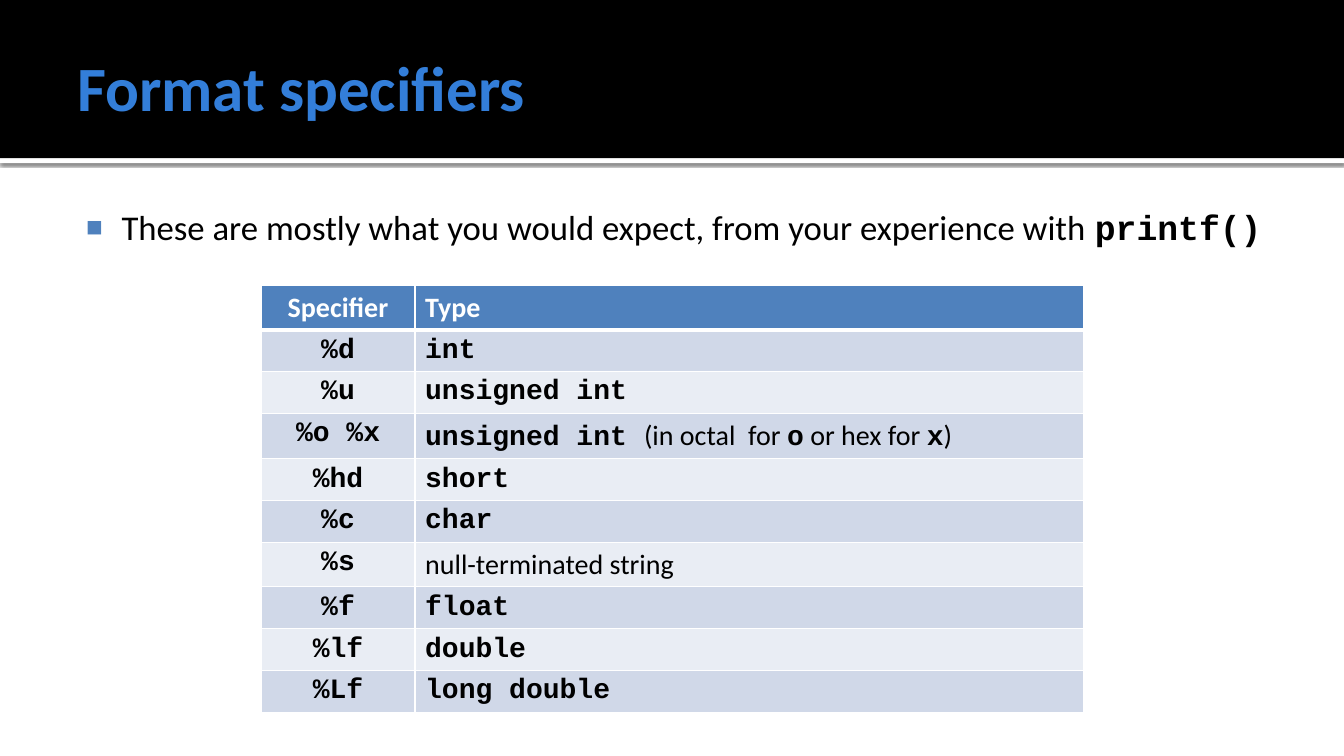
from lxml import etree
from pptx import Presentation
from pptx.dml.color import RGBColor
from pptx.enum.shapes import MSO_SHAPE
from pptx.enum.text import MSO_ANCHOR, MSO_AUTO_SIZE, PP_ALIGN
from pptx.oxml import parse_xml
from pptx.oxml.ns import nsdecls, qn
from pptx.util import Pt

RECT = MSO_SHAPE.RECTANGLE
MID, TOP = MSO_ANCHOR.MIDDLE, MSO_ANCHOR.TOP
LEFT, CENTER = PP_ALIGN.LEFT, PP_ALIGN.CENTER
FIXED = MSO_AUTO_SIZE.NONE

WIDE, HIGH = 960, 540
BLACK, WHITE, BLUE = "000000", "FFFFFF", "4F81BD"
STRIPES = "E9EDF4", "D0D8E8"
TEXT = {"name": "Calibri", "bold": False}
CODE = {"name": "Courier New", "bold": True}
HEAD = {"name": "Calibri", "bold": True}

ROWS = [
    ("%d", "`int`"),
    ("%u", "`unsigned int`"),
    ("%o %x", "`unsigned int `(in octal  for `o` or hex for `x`)"),
    ("%hd", "`short`"),
    ("%c", "`char`"),
    ("%s", "null-terminated string"),
    ("%f", "`float`"),
    ("%lf", "`double`"),
    ("%Lf", "`long double`"),
]


def paint(hue):
    """Return the colour for a hex string."""
    return RGBColor.from_string(hue)


def apply(item, vals):
    """Set each value in a dict as an attribute."""
    for key, val in vals.items():
        setattr(item, key, val)


def write(para, text, size, hue, plain=TEXT):
    """Write text as runs, with the parts between backticks set as code."""
    for pos, part in enumerate(text.split("`")):
        if part:
            run = para.add_run()
            run.text = part
            apply(run.font, {"size": Pt(size), **(CODE if pos % 2 else plain)})
            run.font.color.rgb = paint(hue)


def place(shape, box):
    """Move a shape to a box given in points."""
    apply(shape, dict(zip(("left", "top", "width", "height"), map(Pt, box))))


def frame(shape, pads, anchor):
    """Set the margins and anchor of a text frame and return its paragraph."""
    sides = "margin_left", "margin_top", "margin_right", "margin_bottom"
    apply(shape.text_frame, {
        "word_wrap": True, "auto_size": FIXED, "vertical_anchor": anchor,
        **dict(zip(sides, map(Pt, pads)))})
    return shape.text_frame.paragraphs[0]


def band(slide, box, hue):
    """Put a plain band behind all other shapes."""
    shape = slide.shapes.add_shape(RECT, *map(Pt, box))
    shape.shadow.inherit = False
    shape.fill.solid()
    shape.fill.fore_color.rgb = paint(hue)
    shape.line.fill.background()
    shape.element.getparent().insert(2, shape.element)
    return shape


def banner(slide, box):
    """Build the black banner, its shaded white edge and the title."""
    left, top, width, height = box
    band(slide, box, BLACK)
    edge = band(slide, (left, top + height, width, 3.6), WHITE)
    glow = edge.element.spPr.find(qn("a:effectLst"))
    glow.append(parse_xml(
        f'<a:outerShdw {nsdecls("a")} blurRad="{Pt(2.5)}" dist="{Pt(0.8)}" '
        'dir="5400000" algn="tl" rotWithShape="0"><a:srgbClr val="000000">'
        '<a:alpha val="60000"/></a:srgbClr></a:outerShdw>'))
    title = slide.shapes.title
    place(title, (left + 48, top + 12.2, width - 96, height - 14.4))
    para = frame(title, (7.2, 3.6, 3.6, 3.6), MID)
    para.alignment = LEFT
    write(para, "Format specifiers", 45, "337ED9", HEAD)


def intro(slide, box):
    """Fill the body placeholder with the single bullet."""
    body = slide.placeholders[1]
    place(body, box)
    para = frame(body, (4.3, 7.2, 7.2, 3.6), TOP)
    apply(para, {"alignment": LEFT, "space_before": Pt(0)})
    write(para, "These are mostly what you would expect, from your "
          "experience with `printf()`", 24.8, BLACK)
    props = para.runs[0].font and para._p.get_or_add_pPr()
    props.set("marL", str(Pt(34.5)))
    props.set("indent", str(Pt(-25.2)))
    hue = etree.SubElement(props, qn("a:buClr"))
    etree.SubElement(hue, qn("a:srgbClr"), val=BLUE)
    etree.SubElement(props, qn("a:buSzPct"), val="80000")
    etree.SubElement(props, qn("a:buChar"), char="■")


def border(cell, wide):
    """Rule a cell in white, with its own widths for named sides."""
    props = cell._tc.get_or_add_tcPr()
    for side in "LRTB":
        props.append(parse_xml(
            f'<a:ln{side} {nsdecls("a")} w="{Pt(wide.get(side, 1))}">'
            f'<a:solidFill><a:srgbClr val="{WHITE}"/></a:solidFill>'
            f'</a:ln{side}>'))


def chart(slide, box):
    """Build the table of specifiers and types."""
    data = [("Specifier", "Type")] + [(f"`{key}`", kind) for key, kind in ROWS]
    table = slide.shapes.add_table(len(data), 2, *map(Pt, box)).table
    for col, width in zip(table.columns, (110, box[2] - 110)):
        col.width = Pt(width)
    for row, texts in enumerate(data):
        table.rows[row].height = Pt(box[3] / len(data))
        for col, text in enumerate(texts):
            cell = table.cell(row, col)
            border(cell, {0: {"B": 3}, 1: {"T": 3}}.get(row, {}))
            cell.fill.solid()
            cell.fill.fore_color.rgb = paint(STRIPES[row % 2] if row else BLUE)
            para = cell.text_frame.paragraphs[0]
            para.alignment = LEFT if col else CENTER
            write(para, text, 20, BLACK if row else WHITE,
                  TEXT if row else HEAD)


def main():
    """Build and save the slide."""
    deck = Presentation()
    apply(deck, {"slide_width": Pt(WIDE), "slide_height": Pt(HIGH)})
    slide = deck.slides.add_slide(deck.slide_layouts[1])
    banner(slide, (0, 0, WIDE, 113))
    intro(slide, (48, 139.7, 864, 64))
    chart(slide, (186.5, 203.8, 587.5, 295))
    deck.save("out.pptx")


if __name__ == "__main__":
    main()
